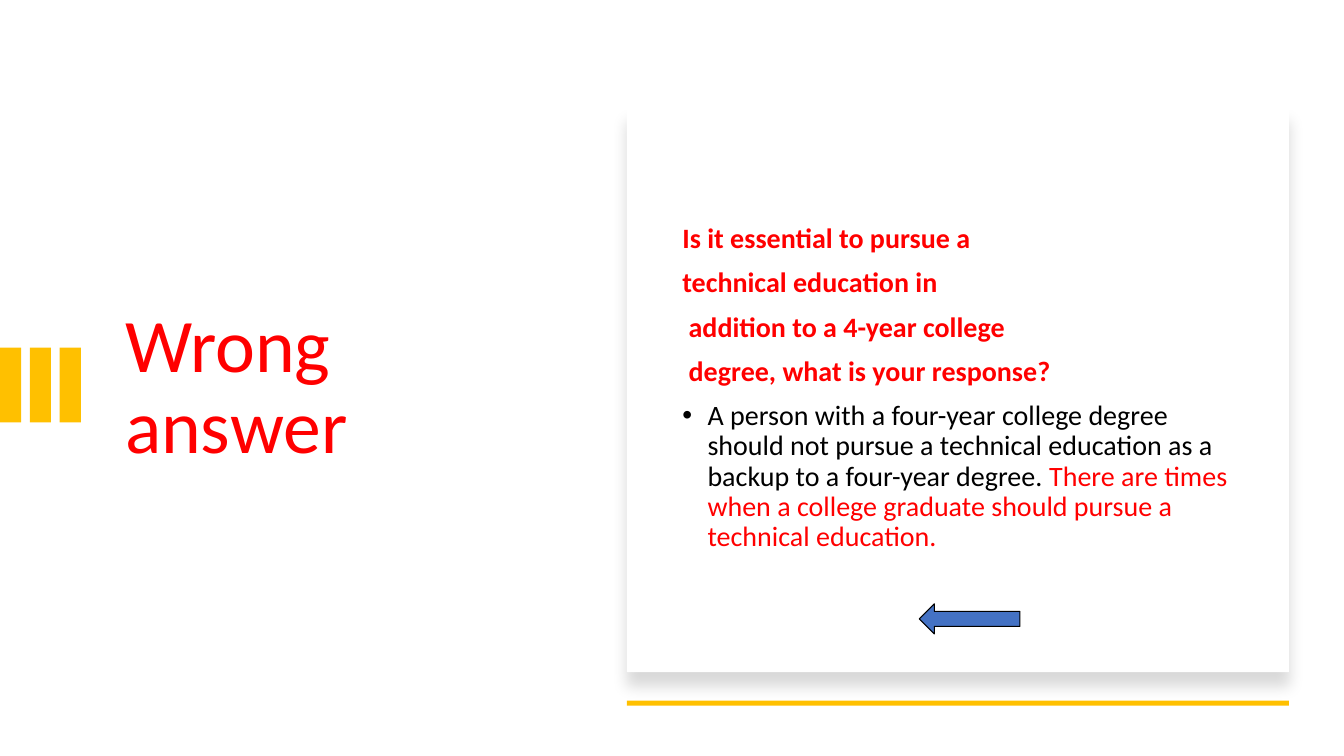
from lxml import etree
from pptx import Presentation
from pptx.dml.color import RGBColor
from pptx.enum.shapes import MSO_SHAPE as SHAPE
from pptx.enum.text import MSO_ANCHOR, MSO_AUTO_SIZE, PP_ALIGN
from pptx.oxml import parse_xml
from pptx.oxml.ns import nsdecls, qn
from pptx.util import Pt

RED = RGBColor(0xFF, 0x00, 0x00)
BLACK = RGBColor(0x00, 0x00, 0x00)
WHITE = RGBColor(0xFF, 0xFF, 0xFF)
GOLD = RGBColor(0xFF, 0xC0, 0x00)
BLUE = RGBColor(0x44, 0x72, 0xC4)

QUESTION = [
    "Is it essential to pursue a",
    "technical education in",
    " addition to a 4-year college",
    " degree, what is your response?",
]
ANSWER = [
    ("A person with a four-year college degree should not pursue a technical "
     "education as a backup to a four-year degree. ", BLACK),
    ("There are times when a college graduate should pursue a technical education.", RED),
]
CARD_LEFT, CARD_WIDTH = 447.8, 473


def add_block(shapes, kind, left, top, width, height, color):
    block = shapes.add_shape(kind, Pt(left), Pt(top), Pt(width), Pt(height))
    block.shadow.inherit = False
    block.fill.solid()
    block.fill.fore_color.rgb = color
    block.line.fill.background()
    return block


def add_run(paragraph, text, **font_format):
    run = paragraph.add_run()
    run.text = text
    color = font_format.pop("color")
    for name, value in {"name": "Calibri", **font_format}.items():
        setattr(run.font, name, value)
    run.font.color.rgb = color


prs = Presentation()
prs.slide_width, prs.slide_height = Pt(960), Pt(540)
slide = prs.slides.add_slide(prs.slide_layouts[1])
shapes = slide.shapes
title, body = shapes.title, slide.placeholders[1]

# Title and body frames
for holder, left, width in [(title, 82.1, 306.7), (body, 480.2, 411.1)]:
    holder.left, holder.top = Pt(left), Pt(108)
    holder.width, holder.height = Pt(width), Pt(339)
    frame_format = {
        "word_wrap": True,
        "auto_size": MSO_AUTO_SIZE.NONE,
        "vertical_anchor": MSO_ANCHOR.MIDDLE,
    }
    for name, value in frame_format.items():
        setattr(holder.text_frame, name, value)

heading = title.text_frame.paragraphs[0]
heading.alignment = PP_ALIGN.LEFT
heading.line_spacing = 0.9
add_run(heading, "Wrong answer", size=Pt(54), color=RED)

# Question lines, then the bulleted answer
text = body.text_frame
paragraphs = [text.paragraphs[0]] + [text.add_paragraph() for _ in QUESTION]
for paragraph in paragraphs:
    paragraph.line_spacing = 0.9
    paragraph.space_before = Pt(10)
    properties = paragraph._p.get_or_add_pPr()
    properties.set("marL", str(Pt(18)))
    properties.set("indent", str(Pt(-18)))
    if paragraph is paragraphs[-1]:
        etree.SubElement(properties, qn("a:buFont")).set("typeface", "Arial")
        etree.SubElement(properties, qn("a:buChar")).set("char", "•")
    else:
        etree.SubElement(properties, qn("a:buNone"))

for paragraph, line in zip(paragraphs, QUESTION):
    add_run(paragraph, line, size=Pt(20), bold=True, color=RED)
for sentence, color in ANSWER:
    add_run(paragraphs[-1], sentence, size=Pt(20), bold=False, color=color)

# Accent bars at the left edge
bars = shapes.add_group_shape()
for i in range(3):
    add_block(bars.shapes, SHAPE.RECTANGLE, i * 21.3, 248.4, 15.2, 53.3, GOLD)

# Card with a soft shadow, placed behind the text
card = add_block(shapes, SHAPE.RECTANGLE, CARD_LEFT, 77, CARD_WIDTH, 403.2, WHITE)
effects = card.element.spPr.find(qn("a:effectLst"))
effects.append(parse_xml(
    f'<a:outerShdw {nsdecls("a")} blurRad="{Pt(11)}" dist="{Pt(10)}" dir="5400000" '
    'algn="t" rotWithShape="0"><a:srgbClr val="000000"><a:alpha val="15000"/>'
    '</a:srgbClr></a:outerShdw>'))
body.element.addprevious(card.element)

# Rule under the card and the back arrow
add_block(shapes, SHAPE.RECTANGLE, CARD_LEFT, 500.4, CARD_WIDTH, 3.6, GOLD)
back_arrow = add_block(shapes, SHAPE.LEFT_ARROW, 656.6, 431.3, 72, 21.6, BLUE)
back_arrow.line.color.rgb = BLACK
back_arrow.line.width = Pt(0.75)

prs.save("out.pptx")
